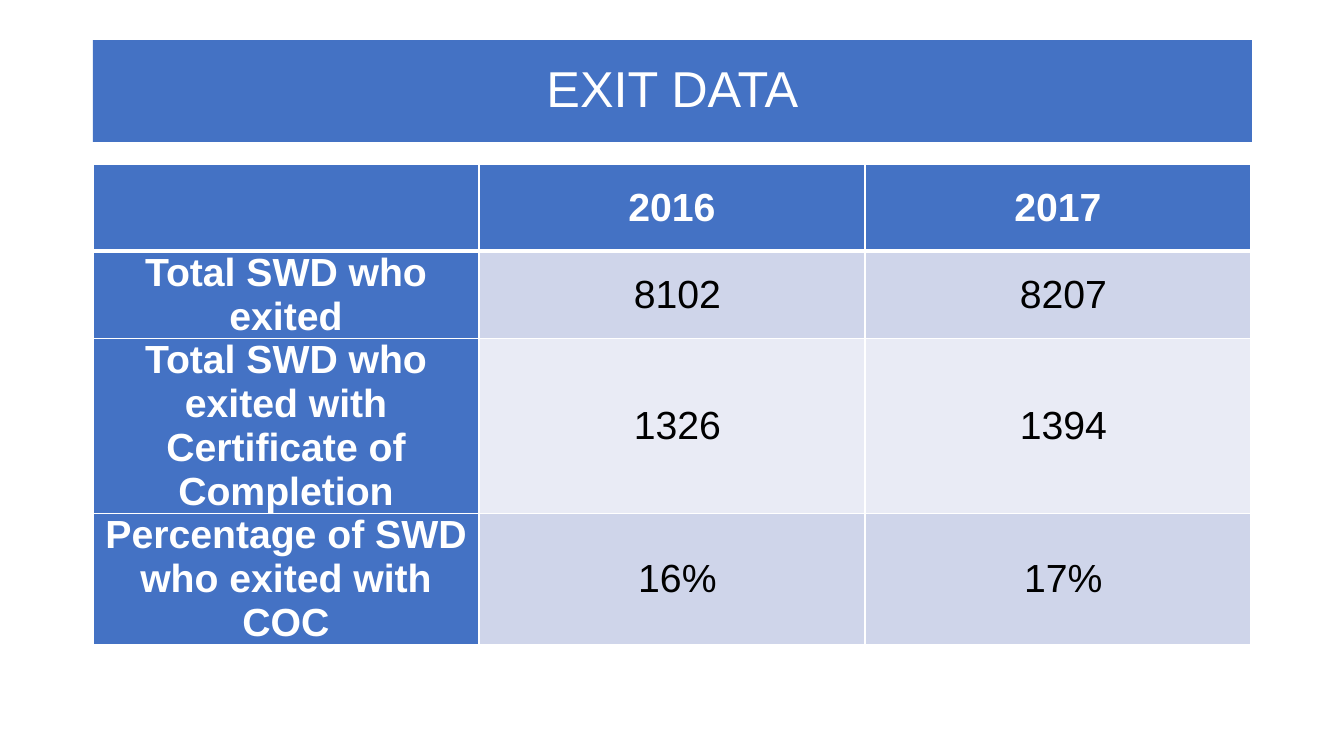
from dataclasses import dataclass

from lxml.etree import SubElement
from pptx import Presentation
from pptx.dml.color import RGBColor
from pptx.enum.text import MSO_ANCHOR, MSO_AUTO_SIZE, PP_ALIGN
from pptx.oxml.ns import qn
from pptx.util import Emu, Pt


@dataclass(frozen=True)
class Theme:
    font: str = "Arial"
    title_size: int = 36
    table_size: int = 28
    accent: str = "4472C4"
    light: str = "FFFFFF"
    dark: str = "000000"
    bands: tuple = ("CFD5EA", "E9EBF5")


THEME = Theme()
EMU_PER_PX = 914400 / 100.8
COLUMN_WIDTH = 386
ROW_HEIGHTS = (87, 87, 175, 131)
EXIT_ROWS = (
    ("", "2016", "2017"),
    ("Total SWD who exited", " 8102", " 8207"),
    ("Total SWD who exited with Certificate of Completion", " 1326", " 1394"),
    ("Percentage of SWD who exited with COC", " 16%", " 17%"),
)


def px(length):
    return Emu(round(length * EMU_PER_PX))


def write_text(frame, text, *, size, color, bold=False, line_spacing=None):
    paragraph = frame.paragraphs[0]
    paragraph.alignment = PP_ALIGN.CENTER
    paragraph.line_spacing = line_spacing
    run = paragraph.add_run()
    run.text = text
    run.font.name = THEME.font
    run.font.size = Pt(size)
    run.font.bold = bold
    run.font.color.rgb = RGBColor.from_string(color)


def paint(fill, color):
    fill.solid()
    fill.fore_color.rgb = RGBColor.from_string(color)


def add_borders(cell, **widths):
    properties = cell._tc.get_or_add_tcPr()
    for side in ("L", "R", "T", "B"):
        line = SubElement(properties, qn(f"a:ln{side}"), w=str(Pt(widths.get(side, 1))))
        solid = SubElement(line, qn("a:solidFill"))
        SubElement(solid, qn("a:srgbClr"), val=THEME.light)


def format_cell(cell, text, row, column):
    is_heading = row == 0 or column == 0
    cell.vertical_anchor = MSO_ANCHOR.MIDDLE
    cell.margin_left = cell.margin_right = px(7)
    cell.margin_top = cell.margin_bottom = 0
    edges = {0: {"B": 3}, 1: {"T": 3}}
    add_borders(cell, **edges.get(row, {}))
    paint(cell.fill, THEME.accent if is_heading else THEME.bands[(row - 1) % 2])
    if text:
        write_text(cell.text_frame, text, size=THEME.table_size, bold=is_heading,
                   color=THEME.light if is_heading else THEME.dark)


def add_title(slide, text):
    title = slide.shapes.title
    title.left, title.top, title.width, title.height = map(px, (93, 40, 1159, 102))
    paint(title.fill, THEME.accent)
    title.text_frame.auto_size = MSO_AUTO_SIZE.NONE
    title.text_frame.vertical_anchor = MSO_ANCHOR.MIDDLE
    write_text(title.text_frame, text, size=THEME.title_size, color=THEME.light,
               line_spacing=0.9)


def add_exit_table(slide, rows):
    columns = len(rows[0])
    table = slide.shapes.add_table(
        len(rows), columns, px(93), px(164),
        px(COLUMN_WIDTH * columns), px(sum(ROW_HEIGHTS))).table
    for column in table.columns:
        column.width = px(COLUMN_WIDTH)
    for row_index, (values, height) in enumerate(zip(rows, ROW_HEIGHTS)):
        table.rows[row_index].height = px(height)
        for column_index, text in enumerate(values):
            format_cell(table.cell(row_index, column_index), text, row_index, column_index)


def main():
    presentation = Presentation()
    presentation.slide_width, presentation.slide_height = px(1344), px(756)
    slide = presentation.slides.add_slide(presentation.slide_layouts[5])
    add_title(slide, "EXIT DATA")
    add_exit_table(slide, EXIT_ROWS)
    presentation.save("out.pptx")


if __name__ == "__main__":
    main()
